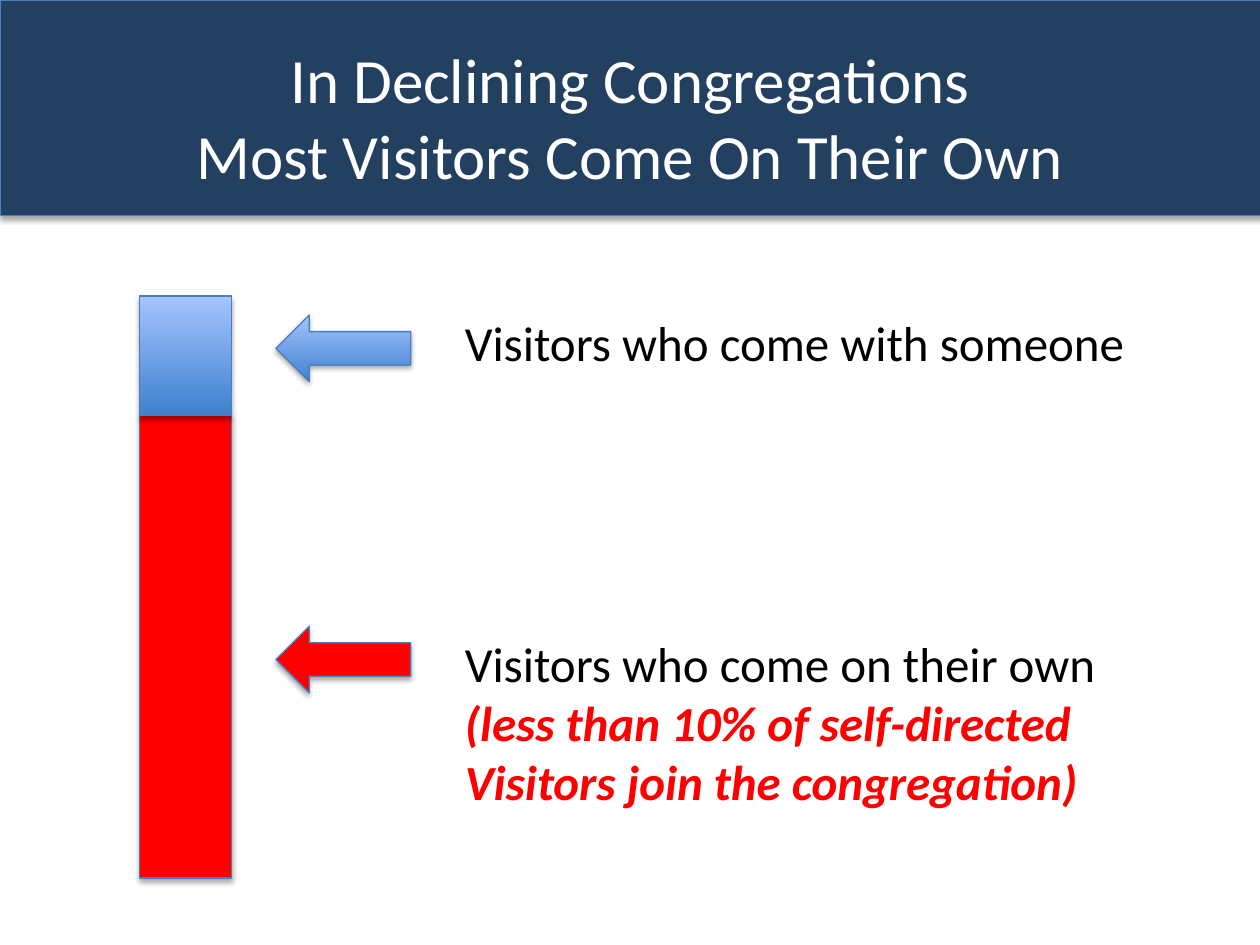
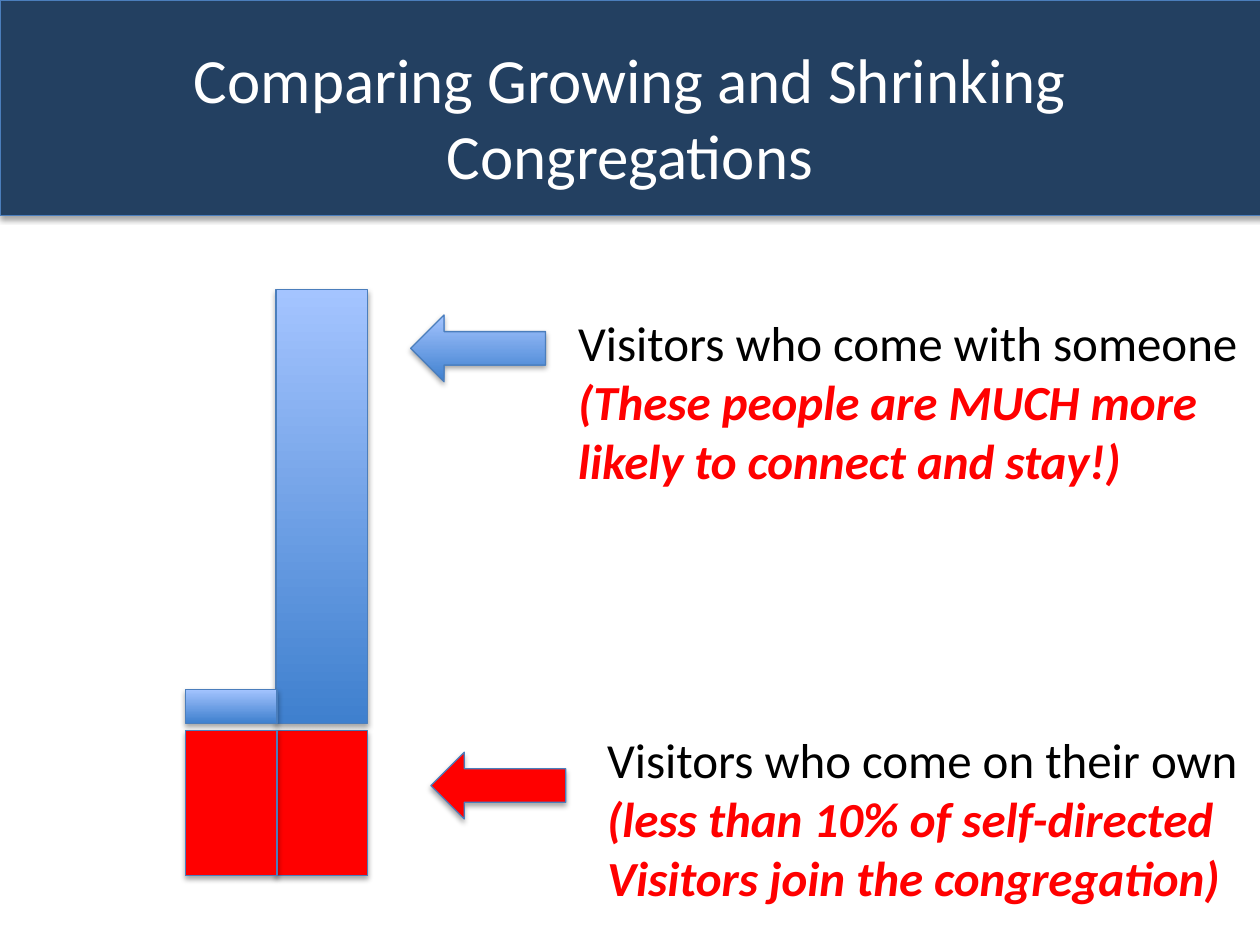
"""Build two slides on how visitors come to declining and growing congregations."""
from pptx import Presentation
from pptx.dml.color import RGBColor
from pptx.enum.shapes import MSO_SHAPE
from pptx.enum.text import MSO_ANCHOR, MSO_AUTO_SIZE, PP_ALIGN
from pptx.util import Inches, Pt

RECT, ARROW = MSO_SHAPE.RECTANGLE, MSO_SHAPE.LEFT_ARROW
MIDDLE, CENTER, LEFT = MSO_ANCHOR.MIDDLE, PP_ALIGN.CENTER, PP_ALIGN.LEFT
FIT = MSO_AUTO_SIZE.SHAPE_TO_FIT_TEXT

NAVY = RGBColor(0x23, 0x40, 0x61)
EDGE = RGBColor(0x4B, 0x7E, 0xBC)
DEEP = RGBColor(0x3F, 0x80, 0xCE)
PALE = RGBColor(0xA4, 0xC4, 0xFF)
RED = RGBColor(0xFF, 0, 0)
BLACK = RGBColor(0, 0, 0)
WHITE = RGBColor(0xFF, 0xFF, 0xFF)
BLUE = (DEEP, PALE)

BAND = (0, 0, 10.05, 1.71)
TITLE = (0.5, 0.3, 9, 1.25)
BAR_W = 0.73
ARROW_W, ARROW_H = 1.07, 0.53

HEAD = {"name": "Calibri", "size": Pt(36), "color": WHITE}
PLAIN = {"name": "Calibri", "size": Pt(28), "color": BLACK}
LOUD = {**PLAIN, "color": RED, "bold": True, "italic": True}

GUEST = "Visitors who come with someone"
ALONE = (
    "Visitors who come on their own",
    "(less than 10% of self-directed",
    "Visitors join the congregation)",
)

SLIDES = [
    {
        "title": ("In Declining Congregations", "Most Visitors Come On Their Own"),
        "bars": [(1.11, 3.3, 3.67, RED), (1.11, 2.35, 0.95, BLUE)],
        "labels": [
            ((3.59, 4.98, 5.28, 1.51), ALONE),
            ((3.59, 2.43, 5.51, 0.57), (GUEST,)),
        ],
        "arrows": [(2.19, 2.5, BLUE), (2.19, 4.97, RED)],
    },
    {
        "title": ("Comparing Growing and Shrinking Congregations",),
        "bars": [
            (2.19, 5.8, 1.15, RED),
            (2.19, 2.3, 3.44, BLUE),
            (1.47, 5.47, 0.27, BLUE),
            (1.47, 5.8, 1.15, RED),
        ],
        "labels": [
            ((4.72, 5.74, 5.28, 1.51), ALONE),
            (
                (4.49, 2.43, 5.53, 1.51),
                (GUEST, "(These people are MUCH more", "likely to connect and stay!)"),
            ),
        ],
        "arrows": [(3.26, 2.5, BLUE), (3.42, 5.97, RED)],
    },
]


def style(run, form):
    for key, value in form.items():
        if key == "color":
            run.font.color.rgb = value
        else:
            setattr(run.font, key, value)


def add_block(slide, kind, box, paint):
    block = slide.shapes.add_shape(kind, *map(Inches, box))
    if isinstance(paint, RGBColor):
        block.fill.solid()
        block.fill.fore_color.rgb = paint
    else:
        block.fill.gradient()
        block.fill.gradient_angle = 90
        for stop, color in zip(block.fill.gradient_stops, paint):
            stop.color.rgb = color
    block.line.color.rgb = EDGE
    block.line.width = Pt(0.75)
    return block


def add_title(slide, lines):
    title = slide.shapes.title
    title.left, title.top, title.width, title.height = map(Inches, TITLE)
    title.text_frame.vertical_anchor = MIDDLE
    para = title.text_frame.paragraphs[0]
    para.alignment = CENTER
    for i, line in enumerate(lines):
        if i:
            para.add_line_break()
        run = para.add_run()
        run.text = line
        style(run, HEAD)


def add_label(slide, box, lines):
    frame = slide.shapes.add_textbox(*map(Inches, box)).text_frame
    frame.word_wrap = False
    frame.auto_size = FIT
    for i, line in enumerate(lines):
        para = frame.add_paragraph() if i else frame.paragraphs[0]
        para.alignment = LEFT
        run = para.add_run()
        run.text = line
        style(run, LOUD if i else PLAIN)


def main():
    deck = Presentation()
    deck.slide_width, deck.slide_height = Inches(10), Inches(7.5)
    layout = deck.slide_layouts[5]
    for i, page in enumerate(SLIDES):
        slide = deck.slides.add_slide(layout)
        if i == 0:
            band = add_block(slide, RECT, BAND, NAVY)
            layout.shapes.element.insert(2, band.element)
        add_title(slide, page["title"])
        for left, top, height, paint in page["bars"]:
            add_block(slide, RECT, (left, top, BAR_W, height), paint)
        for box, lines in page["labels"]:
            add_label(slide, box, lines)
        for left, top, paint in page["arrows"]:
            add_block(slide, ARROW, (left, top, ARROW_W, ARROW_H), paint)
    deck.save("out.pptx")


if __name__ == "__main__":
    main()
